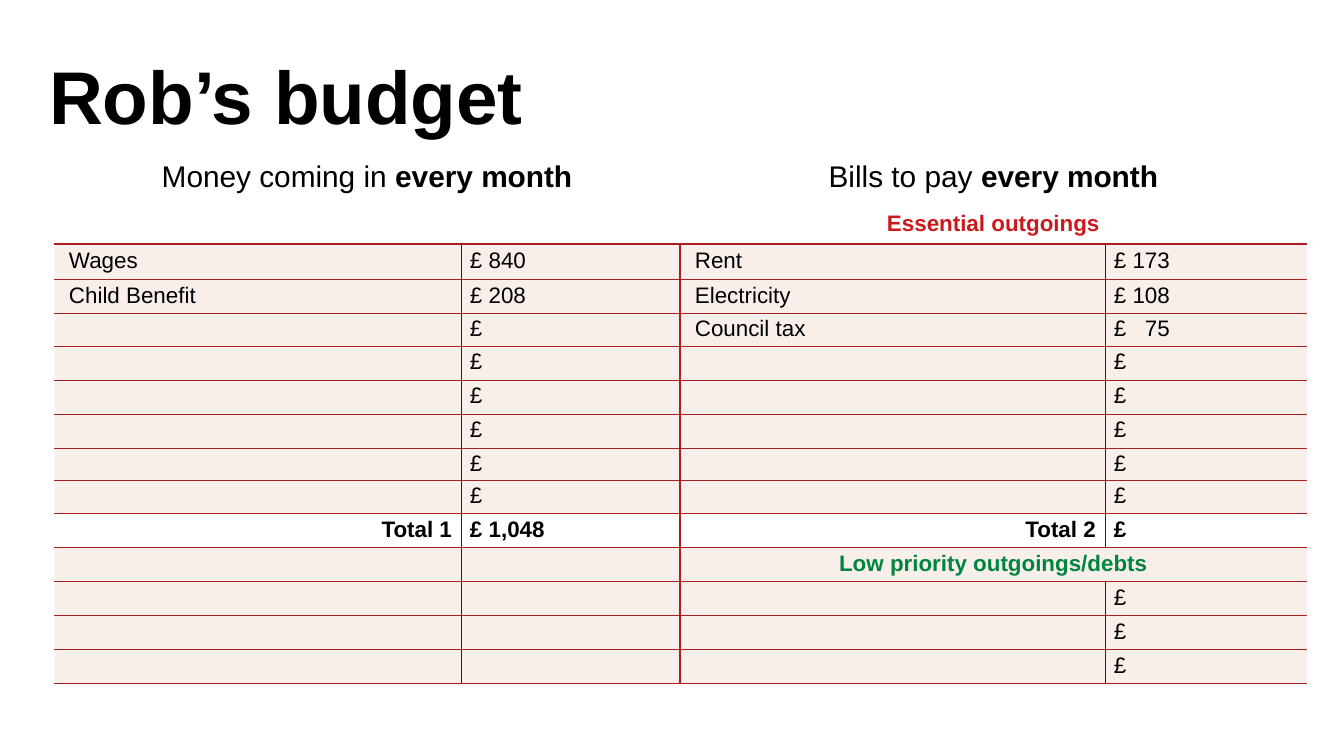
from lxml import etree
from pptx import Presentation
from pptx import util as u
from pptx.dml.color import RGBColor
from pptx.enum import text
from pptx.oxml import ns

PX = 914400 / 134.4
FONT = "Arial"
COLORS = {"ink": "000000", "paper": "FFFFFF", "tint": "F9EFEA", "rule": "AB1D1F",
          "divider": "800000", "essential": "CC191D", "low": "00853F"}
COLUMNS = [407, 219, 425, 202]
ROWS = [51, 37, 35, 34, 33, 34, 34, 34, 32] + [34] * 6
HEADING, ESSENTIAL, FIRST, TOTAL, LOW = 0, 1, 2, 10, 11
MERGED = (HEADING, ESSENTIAL, LOW)
INCOME = [("Wages", "£ 840"), ("Child Benefit", "£ 208")]
BILLS = [("Rent", "£ 173"), ("Electricity", "£ 108"), ("Council tax", "£\t75")]
LEFT, RIGHT, CENTER = text.PP_ALIGN.LEFT, text.PP_ALIGN.RIGHT, text.PP_ALIGN.CENTER


def px(length):
    """Turn px into EMU."""
    return u.Emu(round(length * PX))


def style(run, size, color="ink", bold=False):
    """Format one run."""
    run.font.name, run.font.size, run.font.bold = FONT, u.Pt(size), bold
    run.font.color.rgb = RGBColor.from_string(COLORS[color])


def add_title(slide, box, words):
    """Place the slide title in the box."""
    frame = slide.shapes.add_textbox(*map(px, box)).text_frame
    frame.word_wrap = True
    line = frame.paragraphs[0]
    line.text, line.line_spacing = words, u.Pt(54)
    style(line.runs[0], 40, bold=True)


def upright(row, edge):
    """Give colour and width of the vertical rule at a column edge."""
    if row < FIRST or edge in (0, 4):
        return "paper", 0.25
    return ("rule", 0.75) if edge == 2 else ("divider", 0.25)


def level(edge):
    """Give colour and width of the horizontal rule at a row edge."""
    if edge < FIRST:
        return "paper", 0.75
    return "rule", 0.75 if edge == FIRST else 0.25


def add_borders(cell, row, column, last):
    """Draw the four borders of a cell that ends at the last column."""
    edges = {"lnL": upright(row, column), "lnR": upright(row, last + 1),
             "lnT": level(row), "lnB": level(row + 1)}
    properties = cell._tc.get_or_add_tcPr()
    for place, (tag, (color, width)) in enumerate(edges.items()):
        line = etree.Element(ns.qn(f"a:{tag}"), w=str(u.Pt(width)))
        fill = etree.SubElement(line, ns.qn("a:solidFill"))
        etree.SubElement(fill, ns.qn("a:srgbClr"), val=COLORS[color])
        properties.insert(place, line)


def fill_cell(cell, parts, align=LEFT, size=12, color="ink", indent=9):
    """Write (words, bold) parts into a cell."""
    cell.margin_left, cell.margin_right = px(indent), px(9)
    cell.margin_top = cell.margin_bottom = 0
    line = cell.text_frame.paragraphs[0]
    line.alignment, line.line_spacing = align, 1.15
    for words, bold in parts:
        run = line.add_run()
        run.text = words
        style(run, size, color, bold)
    if not parts:
        line._p.get_or_add_endParaRPr().set("sz", str(size * 100))
    if any("\t" in words for words, _ in parts):
        stops = etree.SubElement(line._p.get_or_add_pPr(), ns.qn("a:tabLst"))
        etree.SubElement(stops, ns.qn("a:tab"), pos=str(px(31)), algn="l")


def fill_side(table, column, entries, total, amounts):
    """Fill a label and an amount column, with pound signs in the given rows."""
    for row in range(FIRST, len(ROWS)):
        if row == LOW and column == 2:
            continue
        is_total = row == TOTAL
        blank = ("", "£" if row in amounts else "")
        listed = dict(enumerate(entries, FIRST)) | {TOTAL: total}
        label, amount = listed.get(row, blank)
        fill_cell(table.cell(row, column), [(label, is_total)] if label else [],
                  RIGHT if is_total else LEFT, indent=9 if is_total else 15)
        fill_cell(table.cell(row, column + 1), [(amount, is_total)] if amount else [])


def add_budget(slide, box):
    """Place the budget table in the box."""
    table = slide.shapes.add_table(len(ROWS), len(COLUMNS), *map(px, box)).table
    table.first_row = table.horz_banding = False
    for column, width in zip(table.columns, COLUMNS):
        column.width = px(width)
    for row, height in zip(table.rows, ROWS):
        row.height = px(height)

    for row in MERGED:
        table.cell(row, 2).merge(table.cell(row, 3))
    table.cell(HEADING, 0).merge(table.cell(HEADING, 1))

    for row in range(len(ROWS)):
        for column in range(len(COLUMNS)):
            cell = table.cell(row, column)
            if cell.is_spanned:
                continue
            if row == HEADING:
                cell.fill.background()
            else:
                cell.fill.solid()
                shade = "paper" if row in (ESSENTIAL, TOTAL) else "tint"
                cell.fill.fore_color.rgb = RGBColor.from_string(COLORS[shade])
            add_borders(cell, row, column, column + cell.span_width - 1
                        if cell.is_merge_origin else column)

    for column, opening in ((0, "Money coming in "), (2, "Bills to pay ")):
        fill_cell(table.cell(HEADING, column),
                  [(opening, False), ("every month", True)], CENTER, 16)
    for column in (0, 1):
        fill_cell(table.cell(ESSENTIAL, column), [])
    for row, words, color in ((ESSENTIAL, "Essential outgoings", "essential"),
                              (LOW, "Low priority outgoings/debts", "low")):
        fill_cell(table.cell(row, 2), [(words, True)], CENTER, color=color)
    fill_side(table, 0, INCOME, ("Total 1", "£ 1,048"), range(FIRST, TOTAL))
    fill_side(table, 2, BILLS, ("Total 2", "£"), range(FIRST, len(ROWS)))


def main():
    """Build and save the budget slide."""
    deck = Presentation()
    deck.slide_width, deck.slide_height = px(1344), px(756)
    slide = deck.slides.add_slide(deck.slide_layouts[6])
    add_title(slide, (36, 32, 964, 109), "Rob’s budget")
    add_budget(slide, (54, 156, sum(COLUMNS), sum(ROWS)))
    deck.save("out.pptx")


if __name__ == "__main__":
    main()
